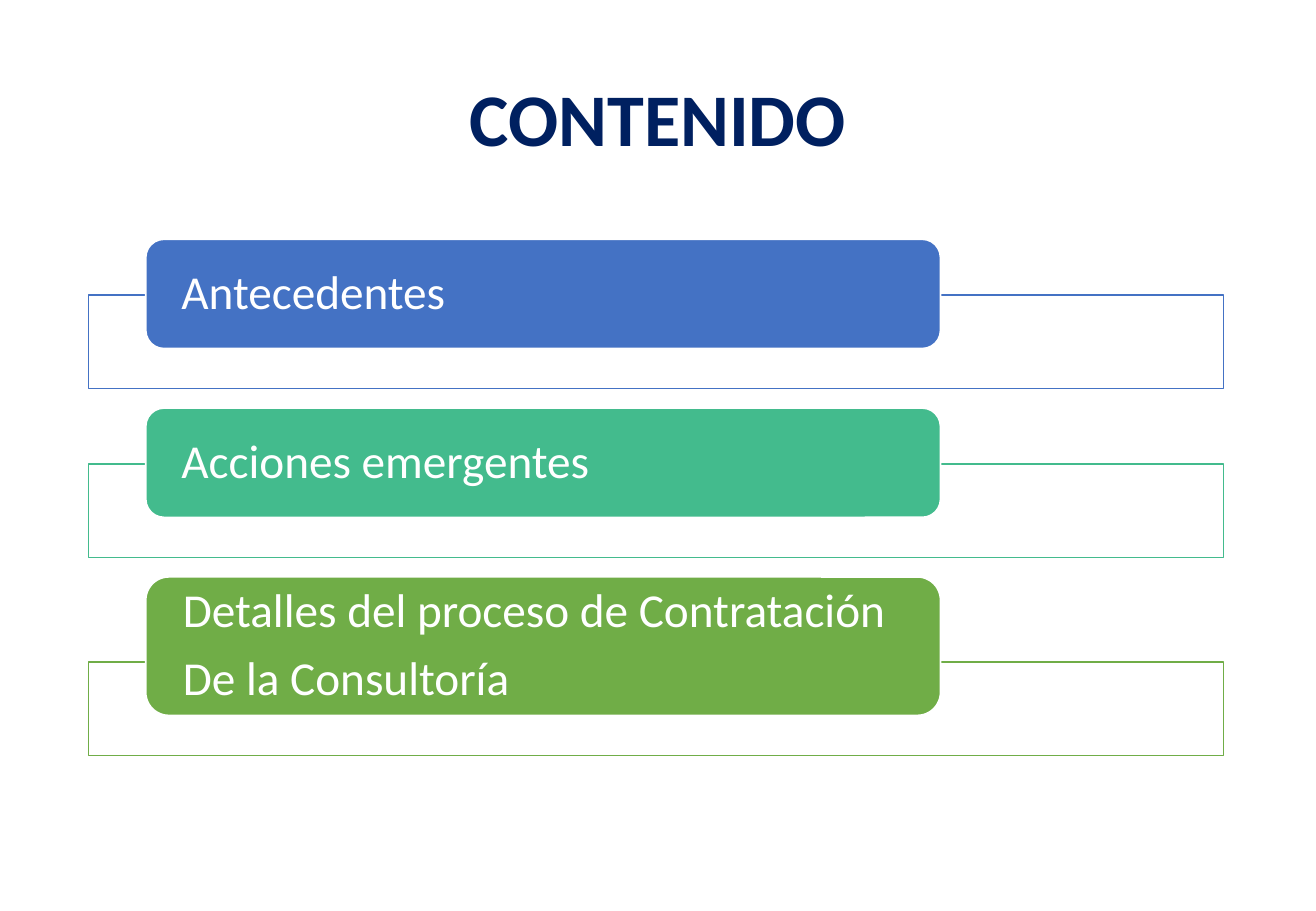
from dataclasses import dataclass

from pptx import Presentation
from pptx.dml.color import RGBColor
from pptx.enum.shapes import MSO_SHAPE
from pptx.enum.text import MSO_ANCHOR, PP_ALIGN
from pptx.util import Inches, Pt

# Content: lines of each topic, its colour and the height of its pill
TITLE = "CONTENIDO"
TOPICS = [
    (["Antecedentes"], "4472C4", 0.9),
    (["Acciones emergentes"], "43BB8D", 0.9),
    (["Detalles del proceso de Contratación", "De la Consultoría"], "70AD47", 1.14),
]


@dataclass(frozen=True)
class Theme:
    font: str = "Calibri"
    title_color: str = "002060"
    white: str = "FFFFFF"
    title_size: float = 44
    topic_size: float = 28
    line_width: float = 1
    line_spacing: float = 0.9
    space_after: float = 9.8


THEME = Theme()

# Layout in inches
SLIDE_WIDTH, SLIDE_HEIGHT = 10.83, 7.5
TITLE_TOP, TITLE_HEIGHT = 0.63, 0.76
FRAME_LEFT, FRAME_WIDTH, FRAME_HEIGHT = 0.73, 9.34, 0.77
PILL_LEFT, PILL_WIDTH = 1.2, 6.54
FIRST_TOP, OVERLAP, GAP = 1.97, 0.44, 0.16
TEXT_INSET = 0.25


def write_lines(text_frame, lines, size, color, align, bold=False, space_after=0):
    text_frame.text = "\n".join(lines)
    text_frame.word_wrap = True
    text_frame.vertical_anchor = MSO_ANCHOR.MIDDLE
    for paragraph in text_frame.paragraphs:
        paragraph.alignment = align
        paragraph.line_spacing = THEME.line_spacing
        paragraph.space_before = Pt(0)
        paragraph.space_after = Pt(space_after)
        paragraph.font.name = THEME.font
        paragraph.font.size = Pt(size)
        paragraph.font.bold = bold
        paragraph.font.color.rgb = RGBColor.from_string(color)


def add_box(slide, kind, left, top, width, height, fill, line):
    shape = slide.shapes.add_shape(
        kind, Inches(left), Inches(top), Inches(width), Inches(height))
    shape.shadow.inherit = False
    shape.fill.solid()
    shape.fill.fore_color.rgb = RGBColor.from_string(fill)
    shape.line.color.rgb = RGBColor.from_string(line)
    shape.line.width = Pt(THEME.line_width)
    return shape


def main():
    presentation = Presentation()
    presentation.slide_width = Inches(SLIDE_WIDTH)
    presentation.slide_height = Inches(SLIDE_HEIGHT)
    slide = presentation.slides.add_slide(
        presentation.slide_layouts.get_by_name("Title Only"))

    # Title
    title = slide.shapes.title
    title.left, title.top = 0, Inches(TITLE_TOP)
    title.width, title.height = presentation.slide_width, Inches(TITLE_HEIGHT)
    write_lines(title.text_frame, [TITLE], THEME.title_size, THEME.title_color,
                PP_ALIGN.CENTER, bold=True)

    # Topics: each pill overlaps the top of its frame
    pill_top = FIRST_TOP
    for lines, color, pill_height in TOPICS:
        frame_top = pill_top + pill_height - OVERLAP
        add_box(slide, MSO_SHAPE.RECTANGLE, FRAME_LEFT, frame_top,
                FRAME_WIDTH, FRAME_HEIGHT, THEME.white, color)
        pill = add_box(slide, MSO_SHAPE.ROUNDED_RECTANGLE, PILL_LEFT, pill_top,
                       PILL_WIDTH, pill_height, color, THEME.white)
        text_frame = pill.text_frame
        text_frame.margin_left = text_frame.margin_right = Inches(TEXT_INSET)
        text_frame.margin_top = text_frame.margin_bottom = 0
        write_lines(text_frame, lines, THEME.topic_size, THEME.white,
                    PP_ALIGN.LEFT, space_after=THEME.space_after)
        pill_top = frame_top + FRAME_HEIGHT + GAP

    presentation.save("out.pptx")


if __name__ == "__main__":
    main()
